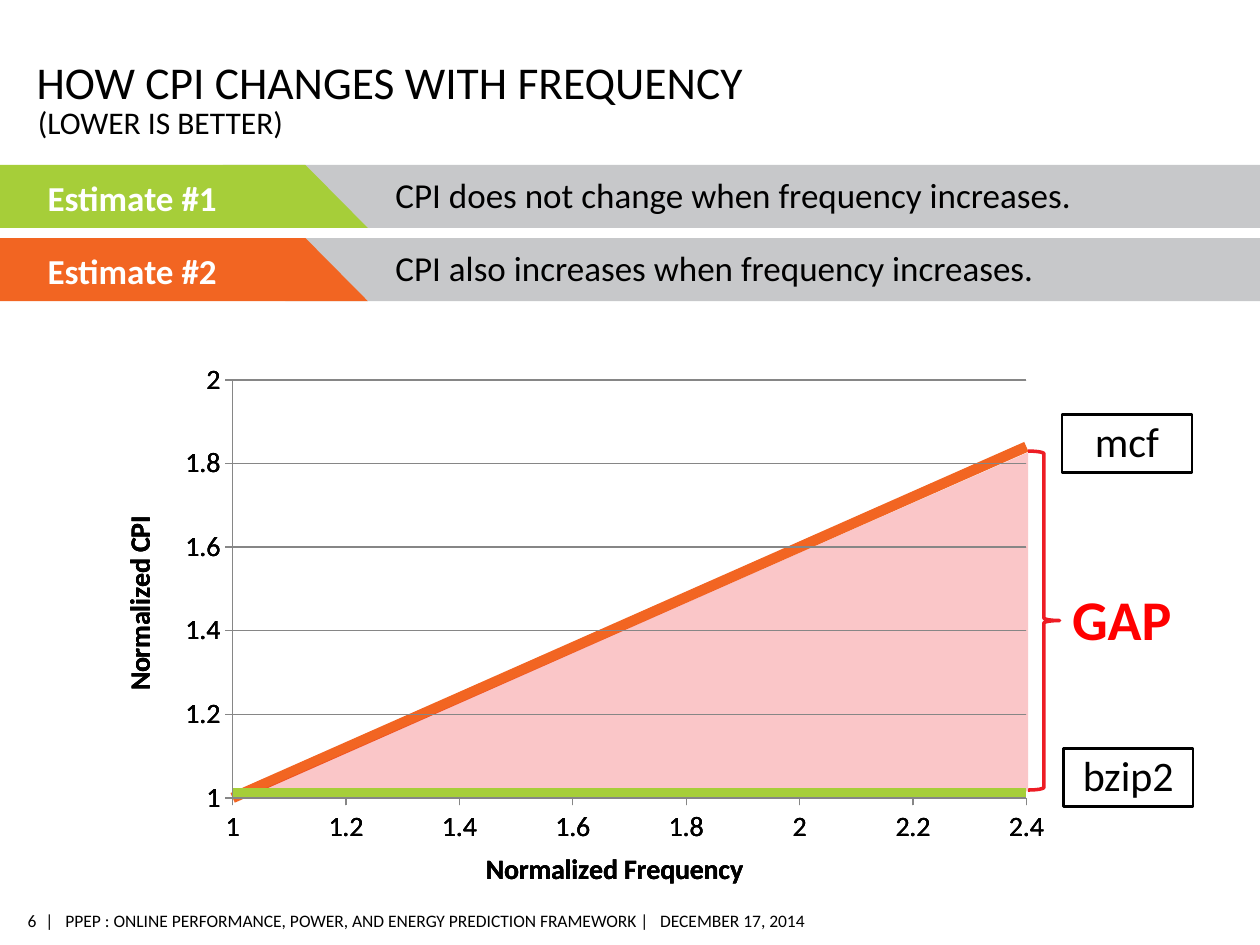
import pptx
import pptx.chart.data
import pptx.dml.color
import pptx.enum.chart
import pptx.enum.shapes
import pptx.enum.text
import pptx.oxml
import pptx.oxml.ns
import pptx.util

COLORS = {"black": "000000", "white": "FFFFFF", "grey": "C7C8CA", "axis": "868686",
          "green": "A6CE39", "orange": "F26522", "red": "ED1C24", "gap": "FF0000"}
FONT = "Calibri"
COLUMNS, ROWS = 100, 75
WIDTH, HEIGHT = pptx.util.Inches(10), pptx.util.Inches(7.5)
SHAPE = pptx.enum.shapes.MSO_SHAPE
ALIGN = pptx.enum.text.PP_ALIGN
ANCHOR = pptx.enum.text.MSO_ANCHOR
PT = pptx.util.Pt


def color(name):
    return pptx.dml.color.RGBColor.from_string(COLORS[name])


def cells(column, row, columns, rows):
    return (round(column * WIDTH / COLUMNS), round(row * HEIGHT / ROWS),
            round(columns * WIDTH / COLUMNS), round(rows * HEIGHT / ROWS))


def style(font, size, ink="black", bold=False):
    font.name, font.size, font.bold = FONT, PT(size), bold
    font.color.rgb = color(ink)


def write(frame, words, size, ink="black", bold=False, align=ALIGN.LEFT,
          anchor=ANCHOR.MIDDLE, spacing=None, insets=(0.1, 0.05, 0.1, 0.05), tabs=()):
    frame.word_wrap = True
    frame.auto_size = pptx.enum.text.MSO_AUTO_SIZE.NONE
    frame.vertical_anchor = anchor
    (frame.margin_left, frame.margin_top,
     frame.margin_right, frame.margin_bottom) = map(pptx.util.Inches, insets)
    paragraph = frame.paragraphs[0]
    paragraph.text = words
    paragraph.alignment = align
    if spacing:
        paragraph.line_spacing = spacing
    if tabs:
        stops = pptx.oxml.parse_xml(f'<a:tabLst {pptx.oxml.ns.nsdecls("a")}/>')
        for stop in tabs:
            tab = stops.makeelement(pptx.oxml.ns.qn("a:tab"),
                                    {"pos": str(pptx.util.Inches(stop)), "algn": "l"})
            stops.append(tab)
        paragraph._p.get_or_add_pPr().append(stops)
    style(paragraph.font, size, ink, bold)


def add_text(shapes, place, words, size, **look):
    write(shapes.add_textbox(*cells(*place)).text_frame, words, size, **look)


def add_figure(shapes, kind, place, fill=None, line=None, weight=1.5):
    figure = shapes.add_shape(kind, *cells(*place))
    figure.shadow.inherit = False
    if fill:
        figure.fill.solid()
        figure.fill.fore_color.rgb = color(fill)
    else:
        figure.fill.background()
    if line:
        figure.line.color.rgb = color(line)
        figure.line.width = PT(weight)
    else:
        figure.line.fill.background()
    return figure


def add_estimate(slide, row, label, statement, accent):
    banner = slide.shapes.add_group_shape().shapes
    for column, columns, fill in ((17.7, 94.1, "grey"), (-9.5, 38.7, accent)):
        band = add_figure(banner, SHAPE.PARALLELOGRAM, (column, row, columns, 5), fill)
        band.adjustments[0] = 0.99
        band._element.spPr.xfrm.set("flipH", "1")
    add_text(banner, (1.5, row + 0.4, 16.7, 4.4), label, 20,
             ink="white", bold=True, align=ALIGN.RIGHT)
    add_text(banner, (30.4, row + 0.1, 69.6, 4.9), statement, 20, spacing=0.9)


def add_benchmark(slide, column, row, name):
    box = add_figure(slide.shapes, SHAPE.RECTANGLE, (column, row, 10.3, 4.6), "white", "black")
    write(box.text_frame, name, 24, align=ALIGN.CENTER, spacing=0.9)


def add_gap(slide):
    area = add_figure(slide.shapes, SHAPE.RIGHT_TRIANGLE, (37.6, 18.8, 26.9, 61.1), "red")
    area.rotation = 270
    tint = area.fill._xPr.find(".//" + pptx.oxml.ns.qn("a:srgbClr"))
    tint.append(tint.makeelement(pptx.oxml.ns.qn("a:alpha"), {"val": "25000"}))
    add_figure(slide.shapes, SHAPE.RIGHT_BRACE, (81.6, 35.8, 2.5, 26.9), line="red", weight=2)


def style_axis(axis, title):
    axis.has_title = True
    heading = axis.axis_title.text_frame
    heading.text = title
    style(heading.paragraphs[0].font, 16, bold=True)
    style(axis.tick_labels.font, 16)
    axis.major_tick_mark = pptx.enum.chart.XL_TICK_MARK.OUTSIDE
    axis.minor_tick_mark = pptx.enum.chart.XL_TICK_MARK.NONE
    axis.format.line.color.rgb = color("axis")


def add_cpi_chart(slide, line_colors):
    data = pptx.chart.data.CategoryChartData()
    steps = range(8)
    data.categories = [f"{1 + 0.2 * step:.2g}" for step in steps]
    data.add_series("Series 1", [1.01 for step in steps])
    data.add_series("Series 2", [round(1 + 0.12 * step, 2) for step in steps])
    chart = slide.shapes.add_chart(pptx.enum.chart.XL_CHART_TYPE.LINE,
                                   *cells(8.6, 28, 75.9, 43.1), data).chart
    style(chart.font, 10)
    chart.has_title = chart.has_legend = False
    chart.plots[0].vary_by_categories = False
    for series, ink in zip(chart.plots[0].series, line_colors):
        series.smooth = False
        series.marker.style = pptx.enum.chart.XL_MARKER_STYLE.NONE
        if ink:
            series.format.line.color.rgb = color(ink)
            series.format.line.width = PT(6)
        else:
            series.format.line.fill.background()
    style_axis(chart.category_axis, "Normalized Frequency")
    cpi = chart.value_axis
    style_axis(cpi, "Normalized CPI")
    cpi.minimum_scale, cpi.maximum_scale, cpi.major_unit = 1, 2, 0.2
    cpi.has_major_gridlines = True
    cpi.major_gridlines.format.line.color.rgb = color("axis")
    cpi.tick_labels.number_format = "General"
    cpi.tick_labels.number_format_is_linked = False
    qn = pptx.oxml.ns.qn
    crossing = cpi._element.find(qn("c:crossBetween"))
    if crossing is None:
        crossing = cpi._element.makeelement(qn("c:crossBetween"), {})
        cpi._element.find(qn("c:majorUnit")).addprevious(crossing)
    crossing.set("val", "midCat")
    plot_area = chart._chartSpace.chart.plotArea
    for old in plot_area.findall(qn("c:layout")):
        plot_area.remove(old)
    parts = [("layoutTarget", "inner"), ("xMode", "edge"), ("yMode", "edge"),
             ("x", 0.13), ("y", 0.05), ("w", 0.83), ("h", 0.77)]
    settings = "".join(f'<c:{tag} val="{value}"/>' for tag, value in parts)
    plot_area.insert(0, pptx.oxml.parse_xml(
        f'<c:layout {pptx.oxml.ns.nsdecls("c")}><c:manualLayout>{settings}'
        '</c:manualLayout></c:layout>'))


def add_heading(slide):
    title = slide.shapes.title
    title.left, title.top, title.width, title.height = cells(2.9, 3.4, 84, 5.2)
    write(title.text_frame, "HOW CPI CHANGES WITH FREQUENCY", 26,
          anchor=ANCHOR.BOTTOM, insets=(0, 0.05, 0, 0))
    add_text(slide.shapes, (3, 8.2, 84, 3.1), "(LOWER IS BETTER)", 18,
             anchor=ANCHOR.TOP, insets=(0, 0, 0, 0))


def add_footer(slide):
    insets = (0, 0.04, 0, 0.04)
    add_text(slide.shapes, (3.6, 71.8, 61.1, 2.6),
             "|\tPPEP : ONLINE PERFORMANCE, POWER, AND ENERGY PREDICTION FRAMEWORK |"
             "\tDECEMBER 17, 2014", 10, insets=insets, tabs=(0.16, 4.88))
    add_text(slide.shapes, (1.3, 71.8, 1.6, 2.6), "6", 10, align=ALIGN.RIGHT, insets=insets)


def main():
    deck = pptx.Presentation()
    deck.slide_width, deck.slide_height = WIDTH, HEIGHT
    slide = deck.slides.add_slide(deck.slide_layouts[5])
    add_footer(slide)
    add_heading(slide)
    add_estimate(slide, 13.1, "Estimate #1",
                 "CPI does not change when frequency increases.", "green")
    add_estimate(slide, 18.9, "Estimate #2",
                 "CPI also increases when frequency increases.", "orange")
    add_benchmark(slide, 84.4, 59.4, "bzip2")
    add_benchmark(slide, 84.3, 32.9, "mcf")
    add_text(slide.shapes, (84.1, 46.4, 10.5, 5.9), "GAP", 32,
             ink="gap", bold=True, spacing=0.9)
    add_cpi_chart(slide, ("green", "orange"))
    add_gap(slide)
    for line_colors in (("green", None), (None, None)):
        add_cpi_chart(slide, line_colors)
    deck.save("out.pptx")


if __name__ == "__main__":
    main()
